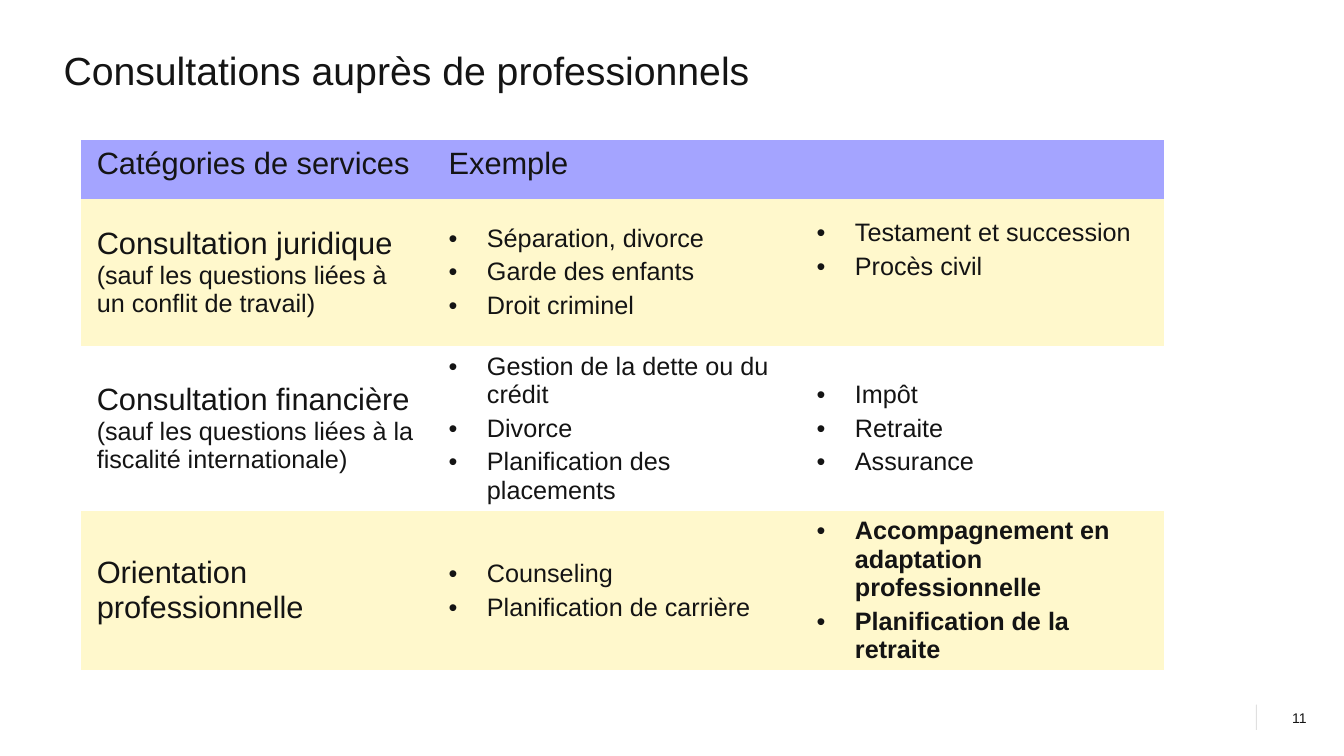
import pptx
import pptx.dml.color
import pptx.enum.shapes
import pptx.enum.text
import pptx.oxml.ns
import pptx.util
from lxml import etree

Inches = pptx.util.Inches
Align = pptx.enum.text.PP_ALIGN
Anchor = pptx.enum.text.MSO_ANCHOR
qn = pptx.oxml.ns.qn

INK, LILAC, CREAM, WHITE = "141414", "A4A4FF", "FFF8CC", "FFFFFF"
PLAIN_TABLE = "{2D5ABB26-0587-4C30-8999-92F81FD0307C}"
COLUMN_WIDTHS = [3.49, 3.65, 3.6]
ROW_HEIGHTS = [0.58, 1.46, 1.64, 1.57]
SERVICES = [
    ("Consultation juridique", "(sauf les questions liées à un conflit de travail)",
     ["Séparation, divorce", "Garde des enfants", "Droit criminel"],
     ["Testament et succession", "Procès civil"]),
    ("Consultation financière", "(sauf les questions liées à la fiscalité internationale)",
     ["Gestion de la dette ou du crédit", "Divorce", "Planification des placements"],
     ["Impôt", "Retraite", "Assurance"]),
    ("Orientation professionnelle", "",
     ["Counseling", "Planification de carrière"],
     ["Accompagnement en adaptation professionnelle", "Planification de la retraite"]),
]


def color(hex_code):
    """Turn a hex string into a colour."""
    return pptx.dml.color.RGBColor.from_string(hex_code)


def add_run(paragraph, text, size, bold=False):
    """Append one formatted run to a paragraph."""
    run = paragraph.add_run()
    run.text = text
    run.font.name = "Arial"
    run.font.size = pptx.util.Pt(size)
    run.font.bold = bold
    run.font.color.rgb = color(INK)


def prepare_frame(frame, anchor):
    """Remove the margins of a text frame and anchor its text."""
    frame.margin_left = frame.margin_right = frame.margin_top = frame.margin_bottom = 0
    frame.word_wrap = True
    frame.auto_size = pptx.enum.text.MSO_AUTO_SIZE.NONE
    frame.vertical_anchor = anchor


def fill_title(slide, text):
    """Place and fill the title placeholder."""
    title = slide.shapes.title
    title.left, title.top = Inches(0.63), Inches(0.51)
    title.width, title.height = Inches(9.95), Inches(1.06)
    prepare_frame(title.text_frame, Anchor.TOP)
    heading = title.text_frame.paragraphs[0]
    heading.alignment = Align.LEFT
    heading.line_spacing = 0.9
    add_run(heading, text, 28)


def add_page_number(slide, number):
    """Add the page number and the faint rule beside it."""
    rule = slide.shapes.add_connector(
        pptx.enum.shapes.MSO_CONNECTOR.STRAIGHT,
        Inches(12.46), Inches(6.99), Inches(12.46), Inches(7.24))
    rule.line.width = pptx.util.Pt(0.75)
    rule.line.color.rgb = color(INK)
    properties = rule._element.spPr
    ink = properties.find(".//" + qn("a:srgbClr"))
    etree.SubElement(ink, qn("a:alpha"), val="12000")
    etree.SubElement(properties, qn("a:effectLst"))
    page = slide.shapes.add_textbox(Inches(12.69), Inches(6.96), Inches(0.27), Inches(0.25))
    prepare_frame(page.text_frame, Anchor.BOTTOM)
    paragraph = page.text_frame.paragraphs[0]
    paragraph.alignment = Align.RIGHT
    add_run(paragraph, number, 10)


def style_cell(cell, fill, anchor):
    """Set the fill, margins and anchor of a cell."""
    cell.fill.solid()
    cell.fill.fore_color.rgb = color(fill)
    cell.margin_left = cell.margin_right = Inches(0.16)
    cell.margin_top = cell.margin_bottom = Inches(0.06)
    cell.vertical_anchor = anchor


def write_category(cell, name, exclusion):
    """Write a service category and its exclusion, if any."""
    paragraph = cell.text_frame.paragraphs[0]
    add_run(paragraph, name, 22)
    if exclusion:
        paragraph.add_line_break()
        add_run(paragraph, exclusion, 18)


def write_bullets(cell, examples, bold=False):
    """Write a bulleted list of examples into a cell."""
    frame = cell.text_frame
    for index, example in enumerate(examples):
        paragraph = frame.add_paragraph() if index else frame.paragraphs[0]
        properties = paragraph._p.get_or_add_pPr()
        properties.set("marL", str(Inches(0.38)))
        properties.set("indent", str(-Inches(0.38)))
        etree.SubElement(properties, qn("a:buFont"), typeface="Arial")
        etree.SubElement(properties, qn("a:buChar"), char="•")
        if index:
            paragraph.space_before = pptx.util.Pt(4)
        add_run(paragraph, example, 18, bold)


def add_services_table(slide):
    """Add the table of service categories and examples."""
    table = slide.shapes.add_table(
        len(ROW_HEIGHTS), len(COLUMN_WIDTHS), Inches(0.8), Inches(1.39),
        Inches(sum(COLUMN_WIDTHS)), Inches(sum(ROW_HEIGHTS))).table
    table.horz_banding = False
    table._tbl.tblPr.find(qn("a:tableStyleId")).text = PLAIN_TABLE
    for column, width in zip(table.columns, COLUMN_WIDTHS):
        column.width = Inches(width)
    for row, height in zip(table.rows, ROW_HEIGHTS):
        row.height = Inches(height)

    for cell in table.rows[0].cells:
        style_cell(cell, LILAC, Anchor.TOP)
    table.cell(0, 1).merge(table.cell(0, 2))
    for column, heading in enumerate(["Catégories de services", "Exemple"]):
        add_run(table.cell(0, column).text_frame.paragraphs[0], heading, 22)

    for row, (name, exclusion, examples, more_examples) in enumerate(SERVICES, start=1):
        for cell in table.rows[row].cells:
            style_cell(cell, CREAM if row % 2 else WHITE, Anchor.MIDDLE)
        write_category(table.cell(row, 0), name, exclusion)
        write_bullets(table.cell(row, 1), examples)
        write_bullets(table.cell(row, 2), more_examples, bold=row == len(SERVICES))

    estate_cell = table.cell(1, 2)
    estate_cell.vertical_anchor = Anchor.TOP
    estate_cell.text_frame.paragraphs[0].line_spacing = 1.5


def main():
    """Build and save the slide."""
    deck = pptx.Presentation()
    deck.slide_width, deck.slide_height = Inches(13.33), Inches(7.5)
    slide = deck.slides.add_slide(deck.slide_layouts.get_by_name("Title Only"))
    slide.background.fill.solid()
    slide.background.fill.fore_color.rgb = color(WHITE)
    add_page_number(slide, "11")
    fill_title(slide, "Consultations auprès de professionnels")
    add_services_table(slide)
    deck.save("out.pptx")


if __name__ == "__main__":
    main()
